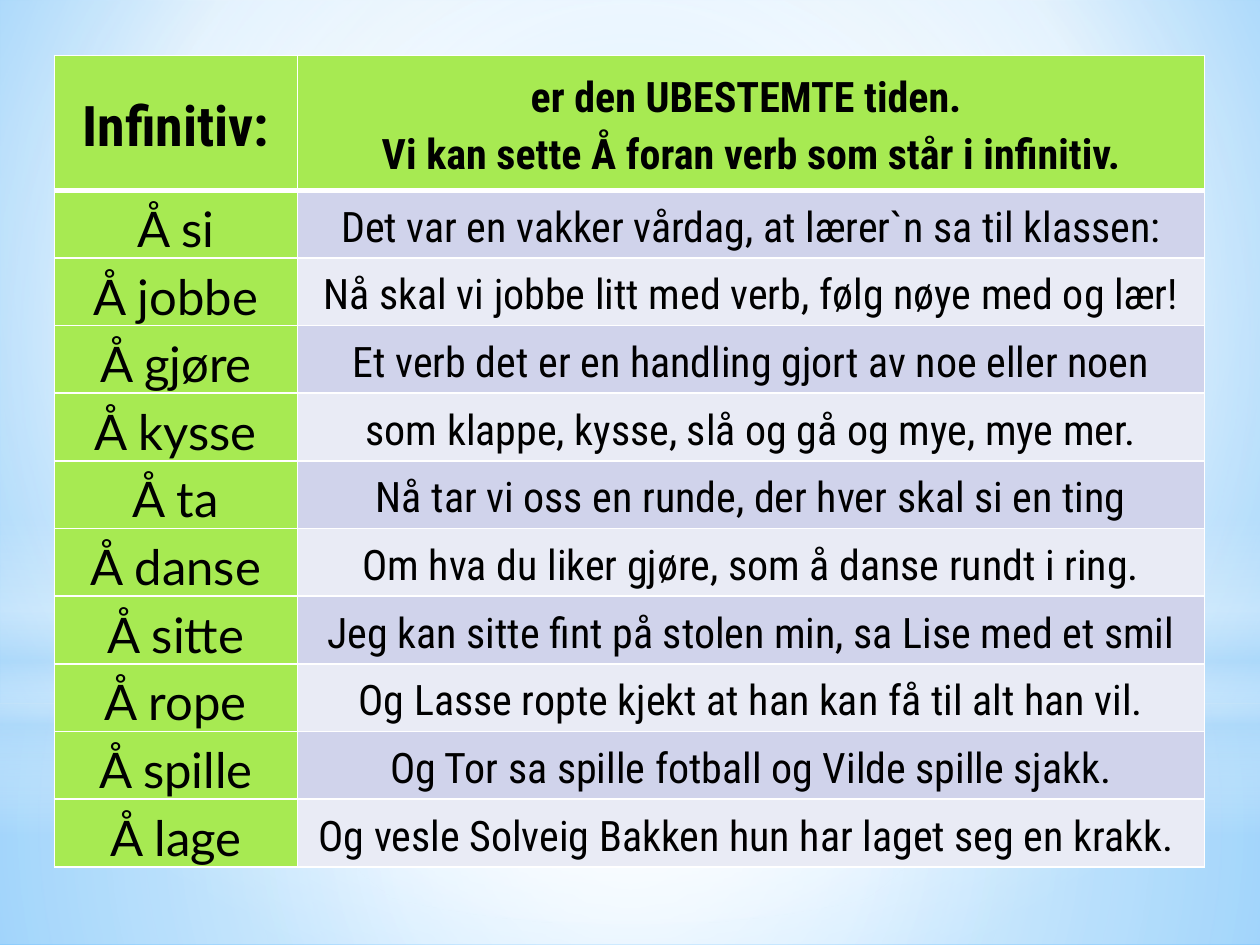
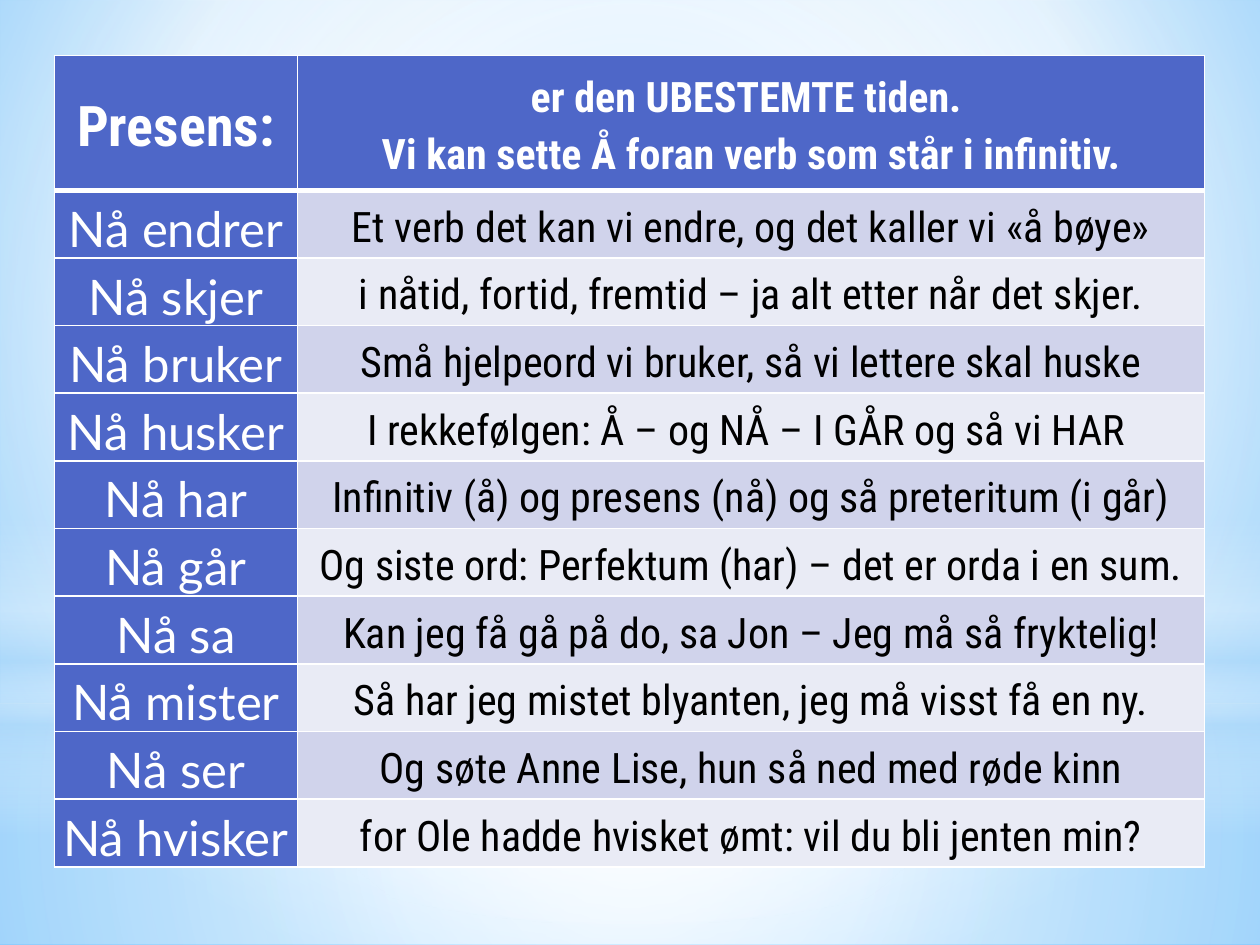
from dataclasses import dataclass

from lxml import etree
from pptx import Presentation
from pptx.dml.color import RGBColor
from pptx.enum.shapes import MSO_SHAPE
from pptx.enum.text import MSO_ANCHOR, PP_ALIGN
from pptx.oxml.ns import qn
from pptx.util import Pt

RECT, OVAL = MSO_SHAPE.RECTANGLE, MSO_SHAPE.OVAL
CENTER, MIDDLE = PP_ALIGN.CENTER, MSO_ANCHOR.MIDDLE

COLORS = {
    "white": "FFFFFF", "black": "000000",
    "sky": "9ED5FF", "deep_sky": "5BB9FF", "mist": "B4DCFA",
    "green": "A7EA52", "blue": "4E67C8",
    "band_dark": "D0D3EB", "band_light": "E9EBF5",
}
HEAD_FONT, VERB_FONT = "Roboto Condensed", "Lato"
SLIDE_W, SLIDE_H = 720, 540
TABLE_X, TABLE_Y = 31, 31.7
COL_WIDTHS = (139, 518.4)
HEADER_H, ROW_H = 77, 38.2
NARROW, WIDE = 3.6, 5.04
HEADER_TEXT = "er den UBESTEMTE tiden. \nVi kan sette Å foran verb som står i infinitiv."


@dataclass
class Gradient:
    stops: list[tuple[int, str, int]]  # position %, colour, opacity %
    focus: tuple[int, int, int, int] | None = (50, 50, 50, 50)  # None: top to bottom


@dataclass
class Band:
    shape: int
    top: float
    height: float
    gradient: Gradient


@dataclass
class VerbTable:
    title: str
    accent: str
    ink: str
    margin: float
    rows: list[tuple[str, str]]


BACKDROP = Gradient([(0, "sky", 100), (60, "white", 100), (100, "deep_sky", 100)],
                    (20, 10, 20, 60))
BANDS = [
    Band(RECT, 402, 138,
         Gradient([(0, "white", 91), (37, "white", 76), (100, "mist", 79)])),
    Band(RECT, 0, 402,
         Gradient([(0, "white", 89), (48, "white", 62), (100, "mist", 79)])),
    Band(RECT, 296.7, 180,
         Gradient([(0, "white", 0), (29, "white", 30), (45, "mist", 40),
                   (55, "white", 26), (65, "mist", 60), (100, "white", 0)], None)),
    Band(OVAL, 126, 402, Gradient([(0, "white", 100), (56, "white", 0)])),
]

TABLES = [
    VerbTable("Infinitiv:", "green", "black", NARROW, [
        ("Å si", "Det var en vakker vårdag, at lærer`n sa til klassen:"),
        ("Å jobbe", "Nå skal vi jobbe litt med verb, følg nøye med og lær!"),
        ("Å gjøre", "Et verb det er en handling gjort av noe eller noen"),
        ("Å kysse", "som klappe, kysse, slå og gå og mye, mye mer."),
        ("Å ta", "Nå tar vi oss en runde, der hver skal si en ting"),
        ("Å danse", "Om hva du liker gjøre, som å danse rundt i ring."),
        ("Å sitte", "Jeg kan sitte fint på stolen min, sa Lise med et smil"),
        ("Å rope", "Og Lasse ropte kjekt at han kan få til alt han vil."),
        ("Å spille", "Og Tor sa spille fotball og Vilde spille sjakk."),
        ("Å lage", "Og vesle Solveig Bakken hun har laget seg en krakk. "),
    ]),
    VerbTable("Presens:", "blue", "white", WIDE, [
        ("Nå endrer", "Et verb det kan vi endre, og det kaller vi «å bøye»"),
        ("Nå skjer", "i nåtid, fortid, fremtid – ja alt etter når det skjer."),
        ("Nå bruker", "Små hjelpeord vi bruker, så vi lettere skal huske"),
        ("Nå husker", "I rekkefølgen: Å – og NÅ – I GÅR og så vi HAR "),
        ("Nå har", "Infinitiv (å) og presens (nå) og så preteritum (i går)"),
        ("Nå går", "Og siste ord: Perfektum (har) – det er orda i en sum."),
        ("Nå sa", "Kan jeg få gå på do, sa Jon – Jeg må så fryktelig!"),
        ("Nå mister", "Så har jeg mistet blyanten, jeg må visst få en ny."),
        ("Nå ser", "Og søte Anne Lise, hun så ned med røde kinn"),
        ("Nå hvisker", "for Ole hadde hvisket ømt: vil du bli jenten min?"),
    ]),
]


def apply_gradient(fill, element, gradient: Gradient) -> None:
    """Fill with colour stops that carry opacity, radial or top to bottom."""
    fill.gradient()
    grad = element.find(".//" + qn("a:gradFill"))
    for child in list(grad):
        grad.remove(child)
    stops = etree.SubElement(grad, qn("a:gsLst"))
    for position, color, opacity in gradient.stops:
        gs = etree.SubElement(stops, qn("a:gs"), pos=str(position * 1000))
        clr = etree.SubElement(gs, qn("a:srgbClr"), val=COLORS[color])
        if opacity < 100:
            etree.SubElement(clr, qn("a:alpha"), val=str(opacity * 1000))
    if gradient.focus is None:
        etree.SubElement(grad, qn("a:lin"), ang="5400000", scaled="0")
    else:
        radial = etree.SubElement(grad, qn("a:path"), {"path": "circle"})
        sides = {k: str(v * 1000) for k, v in zip("ltrb", gradient.focus)}
        etree.SubElement(radial, qn("a:fillToRect"), sides)


def draw_backdrop(s) -> None:
    apply_gradient(s.background.fill, s._element, BACKDROP)
    for band in BANDS:
        sp = s.shapes.add_shape(band.shape, 0, Pt(band.top), Pt(SLIDE_W), Pt(band.height))
        sp.shadow.inherit = False
        sp.line.fill.background()
        apply_gradient(sp.fill, sp._element, band.gradient)


def set_borders(cell, top: float, bottom: float) -> None:
    tc_pr = cell._tc.get_or_add_tcPr()
    widths = {"a:lnL": 1, "a:lnR": 1, "a:lnT": top, "a:lnB": bottom}
    for i, (tag, width) in enumerate(widths.items()):
        ln = etree.Element(qn(tag), w=str(Pt(width)))
        solid = etree.SubElement(ln, qn("a:solidFill"))
        etree.SubElement(solid, qn("a:srgbClr"), val=COLORS["white"])
        tc_pr.insert(i, ln)


def fill_cell(cell, text: str, fill: str, ink: str, font: str, size: float,
              bold: bool, margin: float) -> None:
    cell.fill.solid()
    cell.fill.fore_color.rgb = RGBColor.from_string(COLORS[fill])
    cell.vertical_anchor = MIDDLE
    cell.margin_left = cell.margin_right = Pt(margin)
    cell.margin_top = cell.margin_bottom = 0
    cell.text_frame.text = text
    for p in cell.text_frame.paragraphs:
        p.alignment = CENTER
        p.line_spacing = 1.15
        for r in p.runs:
            r.font.name, r.font.size, r.font.bold = font, Pt(size), bold
            r.font.color.rgb = RGBColor.from_string(COLORS[ink])


def draw_table(s, verbs: VerbTable) -> None:
    n = len(verbs.rows) + 1
    table = s.shapes.add_table(n, 2, Pt(TABLE_X), Pt(TABLE_Y), Pt(sum(COL_WIDTHS)),
                               Pt(HEADER_H + ROW_H * (n - 1))).table
    for column, width in zip(table.columns, COL_WIDTHS):
        column.width = Pt(width)
    for i, row in enumerate(table.rows):
        row.height = Pt(ROW_H if i else HEADER_H)

    # Header row
    fill_cell(table.cell(0, 0), verbs.title, verbs.accent, verbs.ink,
              HEAD_FONT, 32, True, verbs.margin)
    fill_cell(table.cell(0, 1), HEADER_TEXT, verbs.accent, verbs.ink,
              HEAD_FONT, 24, True, NARROW)

    # Verb and verse line, banded
    for i, (verb, verse) in enumerate(verbs.rows, start=1):
        fill_cell(table.cell(i, 0), verb, verbs.accent, verbs.ink,
                  VERB_FONT, 28, False, verbs.margin)
        fill_cell(table.cell(i, 1), verse, "band_dark" if i % 2 else "band_light",
                  "black", HEAD_FONT, 24, False, verbs.margin)

    # Thick rule under the header, thin lines elsewhere
    for i in range(n):
        for j in range(2):
            set_borders(table.cell(i, j), 3 if i == 1 else 1, 3 if i == 0 else 1)


def main() -> None:
    prs = Presentation()
    prs.slide_width, prs.slide_height = Pt(SLIDE_W), Pt(SLIDE_H)
    for verbs in TABLES:
        s = prs.slides.add_slide(prs.slide_layouts[6])
        draw_backdrop(s)
        draw_table(s, verbs)
    prs.save("out.pptx")


if __name__ == "__main__":
    main()
